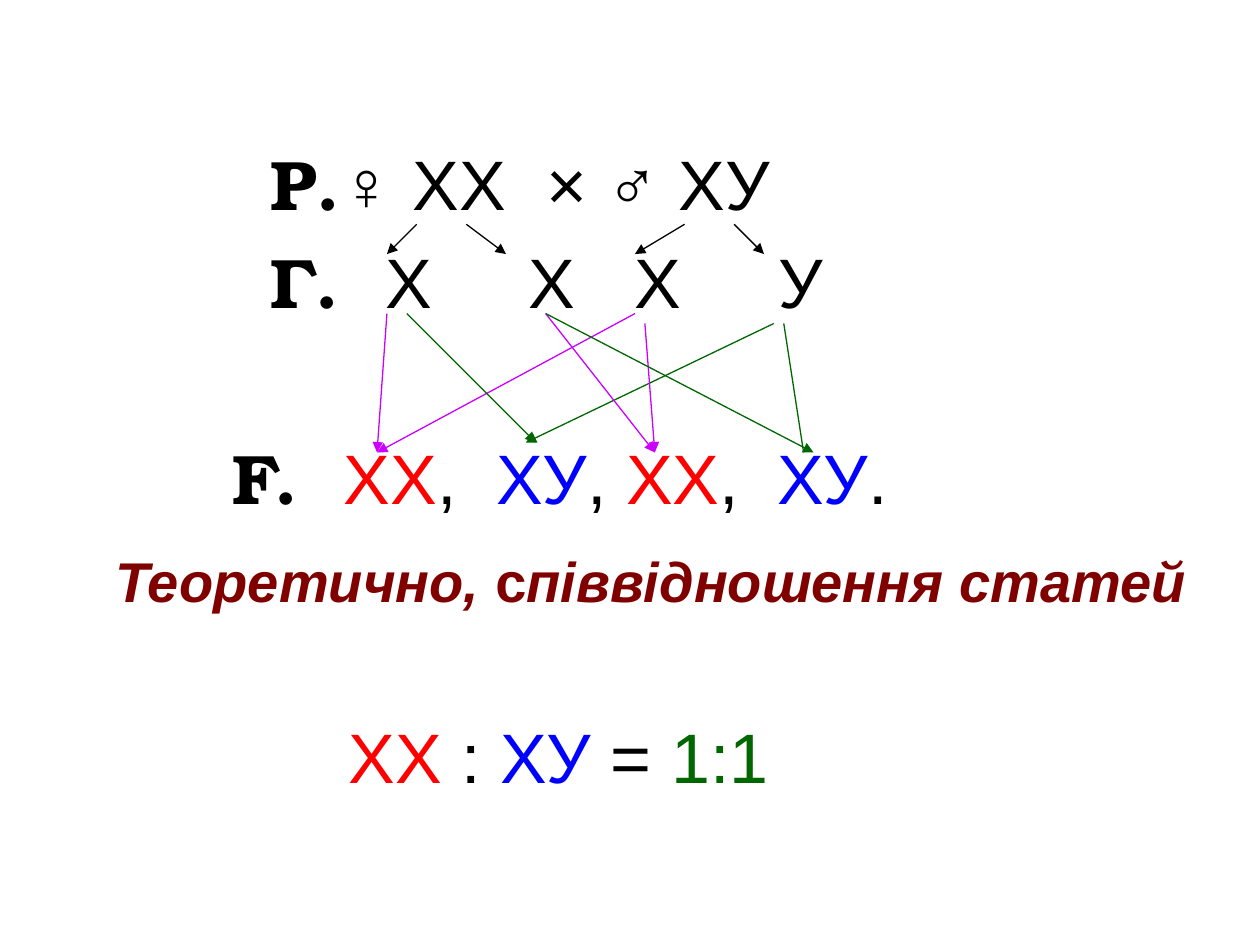
from typing import NamedTuple

from lxml.etree import SubElement
from pptx import Presentation
from pptx.dml.color import RGBColor
from pptx.enum.shapes import MSO_CONNECTOR
from pptx.oxml.ns import qn
from pptx.util import Inches, Mm, Pt

COLORS = {
    "black": "000000",
    "red": "FF0000",
    "blue": "0000FF",
    "green": "006600",
    "maroon": "800000",
    "violet": "CC00FF",
}
LABEL_FONT = "TeX Gyre Bonum"
BODY_FONT = "Arial"
CELL = Mm(2)  # arrow grid, counted from the slide's left edge
ARROWS_TOP = Inches(1.78)  # row 0 of the arrow grid


class Span(NamedTuple):
    text: str
    color: str = "black"
    label: bool = False
    italic: bool = False


class Line(NamedTuple):
    spans: list[Span]
    tabs: list[float]  # inches from the text's left edge
    space_before: float = 8
    size: float = 40
    bold: bool = False


class Arrow(NamedTuple):
    start: tuple[int, int]  # column, row
    end: tuple[int, int]
    color: str = "black"
    head: bool = True


XX = Span("ХХ", "red")
XY = Span("ХУ", "blue")

LINES = [
    Line([Span("\tР.", label=True), Span("♀ ХХ\t× ♂ ХУ")], [1.54, 3.73], 0),
    Line([Span("\tГ.", label=True), Span("\tХ\tХ\tХ\tУ")],
         [1.54, 2.45, 3.59, 4.43, 5.57]),
    Line([Span("\tF.\t", label=True), XX, Span(",\t"), XY, Span(", "),
          XX, Span(",\t"), XY, Span(".")],
         [1.24, 2.12, 3.33, 5.56], 64),
    Line([Span("\tТеоретично,", "maroon", italic=True), Span(" с", "maroon"),
          Span("піввідношення статей", "maroon", italic=True)],
         [0.31], 6, 32, True),
    Line([Span("\t"), XX, Span(" : "), XY, Span(" = "), Span("1:1", "green")],
         [2.16], 57),
]

ARROWS = [
    # parents to gametes
    Arrow((47, 0), (51, 3)),
    Arrow((69, 0), (64, 3)),
    Arrow((74, 0), (77, 3)),
    Arrow((42, 0), (39, 3)),
    # gametes to offspring
    Arrow((39, 9), (38, 23), "violet"),
    Arrow((64, 9), (38, 23), "violet"),
    Arrow((41, 9), (54, 22), "green"),
    Arrow((78, 10), (53, 22), "green"),
    Arrow((55, 9), (66, 23), "violet"),
    Arrow((65, 10), (66, 23), "violet"),
    Arrow((55, 9), (82, 23), "green"),
    Arrow((79, 10), (81, 23), "green", head=False),
]


def rgb(name: str) -> RGBColor:
    return RGBColor.from_string(COLORS[name])


def write_line(para, line: Line) -> None:
    properties = para._p.get_or_add_pPr()
    tab_list = SubElement(properties, qn("a:tabLst"))
    for position in line.tabs:
        SubElement(tab_list, qn("a:tab"), pos=str(Inches(position)), algn="l")
    para.line_spacing = Pt(48)
    para.space_before = Pt(line.space_before)
    para.font.size = Pt(line.size)
    for item in line.spans:
        span = para.add_run()
        span.text = item.text
        span.font.name = LABEL_FONT if item.label else BODY_FONT
        span.font.bold = line.bold or item.label
        span.font.italic = item.italic
        span.font.color.rgb = rgb(item.color)


def draw_arrow(page, arrow: Arrow) -> None:
    (x1, y1), (x2, y2) = arrow.start, arrow.end
    connector = page.shapes.add_connector(
        MSO_CONNECTOR.STRAIGHT,
        x1 * CELL, ARROWS_TOP + y1 * CELL,
        x2 * CELL, ARROWS_TOP + y2 * CELL,
    )
    connector.line.color.rgb = rgb(arrow.color)
    connector.line.width = Pt(0.75)
    properties = connector._element.spPr
    if arrow.head:
        SubElement(properties.find(qn("a:ln")), qn("a:tailEnd"), type="triangle")
    SubElement(properties, qn("a:effectLst"))


def main() -> None:
    deck = Presentation()
    deck.slide_width, deck.slide_height = Inches(10), Inches(7.5)
    page = deck.slides.add_slide(deck.slide_layouts[6])

    box = page.shapes.add_textbox(
        Inches(0.51), Inches(1.07), Inches(9.13), Inches(5.04))
    frame = box.text_frame
    frame.word_wrap = True
    for index, line in enumerate(LINES):
        para = frame.add_paragraph() if index else frame.paragraphs[0]
        write_line(para, line)

    for arrow in ARROWS:
        draw_arrow(page, arrow)

    deck.save("out.pptx")


if __name__ == "__main__":
    main()
